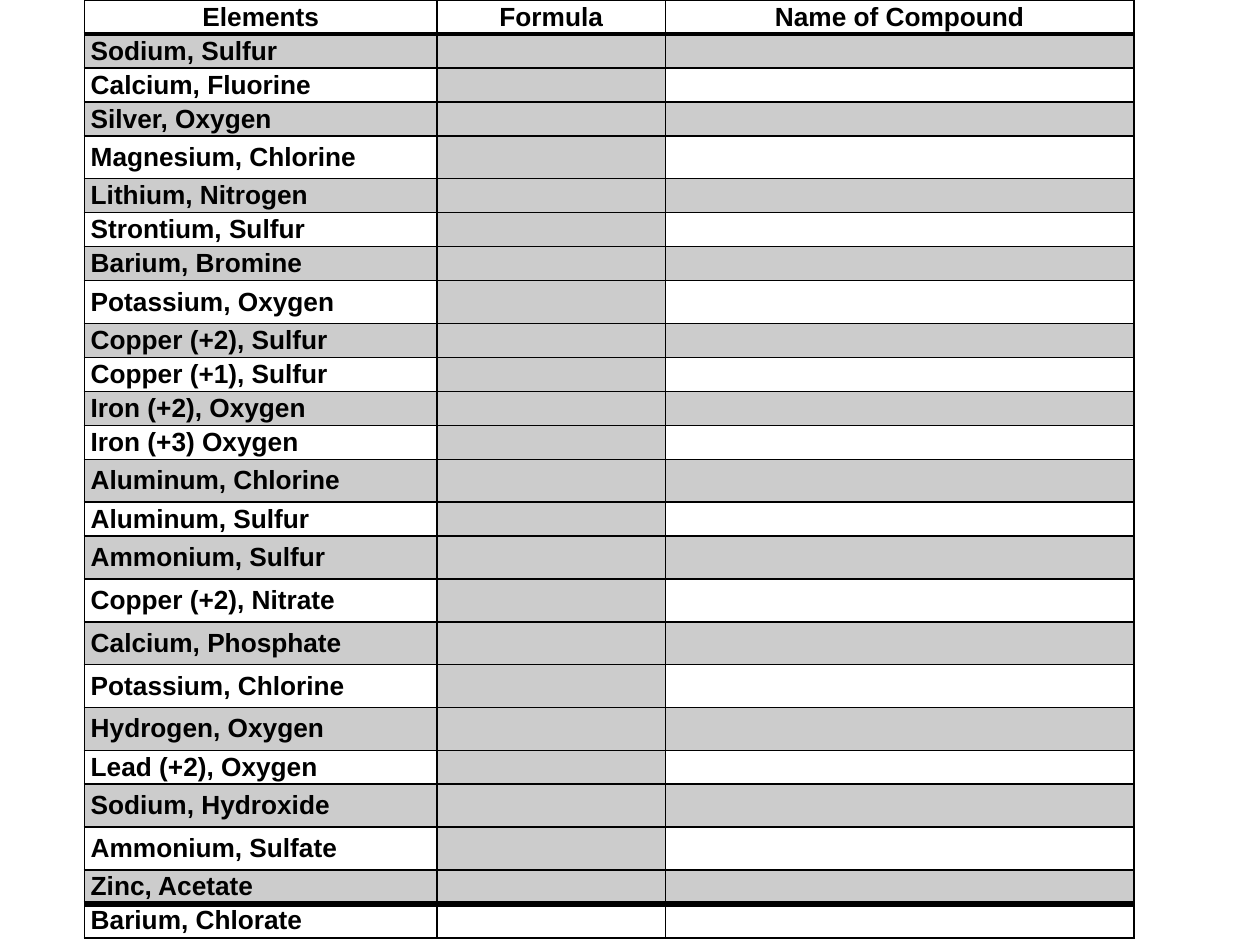
from lxml import etree
from pptx import Presentation
from pptx.dml.color import RGBColor
from pptx.enum.text import MSO_ANCHOR, PP_ALIGN
from pptx.oxml.ns import qn
from pptx.util import Inches, Pt

BLACK = RGBColor(0, 0, 0)
LEFT, CENTER = PP_ALIGN.LEFT, PP_ALIGN.CENTER
MIDDLE = MSO_ANCHOR.MIDDLE

HEADINGS = ["Elements", "Formula", "Name of Compound"]
COLUMN_WIDTHS = [2.8, 1.81, 3.72]
SHORT_ROW, TALL_ROW = 0.27, 0.34
ELEMENTS = [
    ("Sodium, Sulfur", SHORT_ROW),
    ("Calcium, Fluorine", SHORT_ROW),
    ("Silver, Oxygen", SHORT_ROW),
    ("Magnesium, Chlorine", TALL_ROW),
    ("Lithium, Nitrogen", SHORT_ROW),
    ("Strontium, Sulfur", SHORT_ROW),
    ("Barium, Bromine", SHORT_ROW),
    ("Potassium, Oxygen", TALL_ROW),
    ("Copper (+2), Sulfur", SHORT_ROW),
    ("Copper (+1), Sulfur", SHORT_ROW),
    ("Iron (+2), Oxygen", SHORT_ROW),
    ("Iron (+3) Oxygen", SHORT_ROW),
    ("Aluminum, Chlorine", TALL_ROW),
    ("Aluminum, Sulfur", SHORT_ROW),
    ("Ammonium, Sulfur", TALL_ROW),
    ("Copper (+2), Nitrate", TALL_ROW),
    ("Calcium, Phosphate", TALL_ROW),
    ("Potassium, Chlorine", TALL_ROW),
    ("Hydrogen, Oxygen", TALL_ROW),
    ("Lead (+2), Oxygen", SHORT_ROW),
    ("Sodium, Hydroxide", TALL_ROW),
    ("Ammonium, Sulfate", TALL_ROW),
    ("Zinc, Acetate", SHORT_ROW),
    ("Barium, Chlorate", SHORT_ROW),
]


def write_text(para, text, size=15, font="Arial", color=BLACK, bold=True, align=LEFT):
    para.alignment = align
    if not text:
        etree.SubElement(para._p, qn("a:endParaRPr"), sz=str(size * 100))
        return
    span = para.add_run()
    span.text = text
    span.font.size = Pt(size)
    span.font.name = font
    span.font.bold = bold
    span.font.color.rgb = color


class Worksheet:
    line_color = BLACK
    shade_color = BLACK
    shade_opacity = 20
    side_margin = Inches(0.05)

    def __init__(self, deck):
        self.page = deck.slides.add_slide(deck.slide_layouts[6])

    def table(self, left, top, widths, heights):
        frame = self.page.shapes.add_table(
            len(heights), len(widths), Inches(left), Inches(top),
            Inches(sum(widths)), Inches(sum(heights)))
        table = frame.table
        table.first_row = False
        table.horz_banding = False
        for column, width in zip(table.columns, widths):
            column.width = Inches(width)
        for row, height in zip(table.rows, heights):
            row.height = Inches(height)
        return table

    def cell(self, cell, text, shaded=False, align=LEFT, top=1, bottom=1):
        cell.margin_left = cell.margin_right = self.side_margin
        cell.margin_top = cell.margin_bottom = 0
        cell.vertical_anchor = MIDDLE
        write_text(cell.text_frame.paragraphs[0], text, align=align)
        self.borders(cell, top, bottom)
        self.shade(cell, shaded)

    def borders(self, cell, top, bottom):
        properties = cell._tc.get_or_add_tcPr()
        for edge, width in (("L", 1), ("R", 1), ("T", top), ("B", bottom)):
            line = etree.SubElement(properties, qn(f"a:ln{edge}"), w=str(Pt(width)))
            fill = etree.SubElement(line, qn("a:solidFill"))
            etree.SubElement(fill, qn("a:srgbClr"), val=str(self.line_color))

    def shade(self, cell, shaded):
        if not shaded:
            cell.fill.background()
            return
        cell.fill.solid()
        cell.fill.fore_color.rgb = self.shade_color
        color = cell._tc.tcPr.find(qn("a:solidFill")).find(qn("a:srgbClr"))
        etree.SubElement(color, qn("a:alpha"), val=str(self.shade_opacity * 1000))


def main():
    deck = Presentation()
    deck.slide_width, deck.slide_height = Inches(10), Inches(7.5)
    sheet = Worksheet(deck)
    heights = [SHORT_ROW] + [height for _, height in ELEMENTS]
    table = sheet.table(0.67, 0, COLUMN_WIDTHS, heights)
    rows = [HEADINGS] + [[name, "", ""] for name, _ in ELEMENTS]
    last = len(ELEMENTS)
    rules = {1: 2, last: 4}
    for row, texts in enumerate(rows):
        for column, text in enumerate(texts):
            sheet.cell(
                table.cell(row, column), text,
                shaded=0 < row < last and (row % 2 == 1 or column == 1),
                align=CENTER if row == 0 else LEFT,
                top=rules.get(row, 1), bottom=rules.get(row + 1, 1))
    deck.save("out.pptx")


if __name__ == "__main__":
    main()
